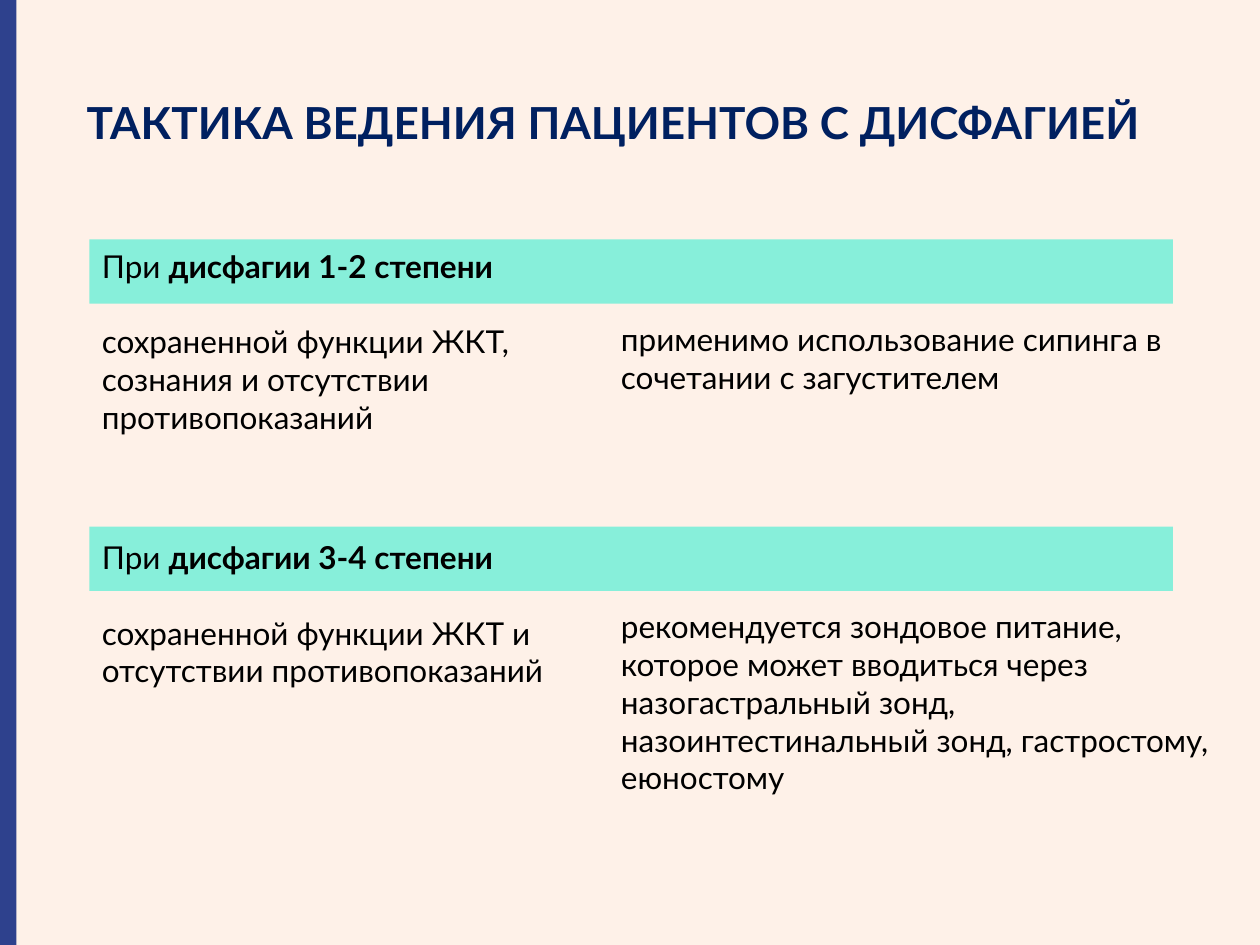
from pptx import Presentation
from pptx.dml.color import RGBColor
from pptx.enum.shapes import MSO_SHAPE as Shape
from pptx.enum.text import MSO_ANCHOR as Anchor
from pptx.util import Inches, Pt

CREAM = RGBColor(0xFE, 0xF1, 0xE8)
MINT = RGBColor(0x87, 0xEF, 0xDA)
BLUE = RGBColor(0x2E, 0x41, 0x8D)
NAVY = RGBColor(0x00, 0x20, 0x60)
BLACK = RGBColor(0, 0, 0)

prs = Presentation()
prs.slide_width, prs.slide_height = Inches(10), Inches(7.5)
slide = prs.slides.add_slide(prs.slide_layouts[6])
slide.background.fill.solid()
slide.background.fill.fore_color.rgb = CREAM


def add_bar(left, top, width, height, color):
    bar = slide.shapes.add_shape(
        Shape.RECTANGLE, Inches(left), Inches(top), Inches(width), Inches(height))
    bar.shadow.inherit = False
    bar.fill.solid()
    bar.fill.fore_color.rgb = color
    bar.line.fill.background()


def add_text(left, top, width, height, lines, size=18, color=BLACK):
    """Add a text box; each line is a list of (text, bold) runs."""
    box = slide.shapes.add_textbox(
        Inches(left), Inches(top), Inches(width), Inches(height))
    frame = box.text_frame
    frame.word_wrap = True
    for i, line in enumerate(lines):
        para = frame.add_paragraph() if i else frame.paragraphs[0]
        for text, bold in line:
            run = para.add_run()
            run.text = text
            run.font.name = "Lato"
            run.font.size = Pt(size)
            run.font.bold = bold
            run.font.color.rgb = color
    return frame


add_bar(0, 0, 0.13, 7.5, BLUE)
title = add_text(0.59, 0.73, 8.96, 0.52,
                 [[("ТАКТИКА ВЕДЕНИЯ ПАЦИЕНТОВ С ДИСФАГИЕЙ", True)]], 25.2, NAVY)
title.vertical_anchor = Anchor.MIDDLE
title.paragraphs[0].line_spacing = 0.9

# bar top, text top, text height, grade, conditions, advice top, advice height, advice
groups = [
    (1.9, 1.91, 1.62, "1-2",
     ["сохраненной функции ЖКТ,", "сознания и отсутствии", "противопоказаний"],
     2.49, 0.71, "применимо использование сипинга в сочетании с загустителем"),
    (4.18, 4.22, 1.31, "3-4",
     ["сохраненной функции ЖКТ и отсутствии противопоказаний"],
     4.77, 1.62, "рекомендуется зондовое питание, которое может вводиться через "
     "назогастральный зонд, назоинтестинальный зонд, гастростому, еюностому"),
]
for bar_top, top, high, grade, terms, tip_top, tip_high, tip in groups:
    add_bar(0.71, bar_top, 8.6, 0.51, MINT)
    head = [("При ", False), (f"дисфагии {grade} степени", True)]
    frame = add_text(0.71, top, 3.78, high,
                     [head] + [[(term, False)] for term in terms])
    frame.paragraphs[1].space_before = Pt(21.6)
    add_text(4.83, tip_top, 5, tip_high, [[(tip, False)]])

prs.save("out.pptx")
